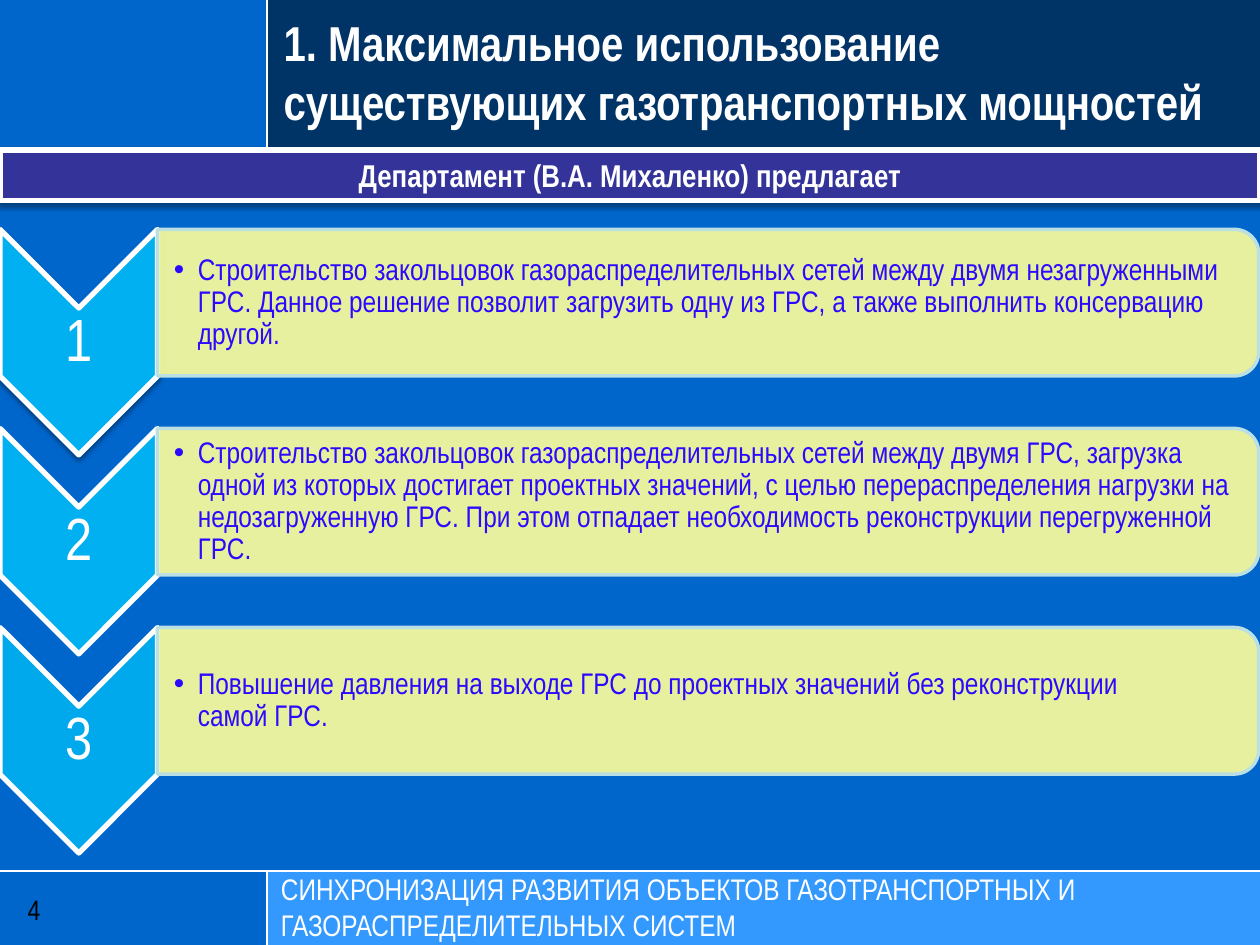
from dataclasses import dataclass

from lxml.etree import SubElement
from pptx import Presentation
from pptx.dml.color import RGBColor
from pptx.enum.shapes import MSO_CONNECTOR, MSO_SHAPE
from pptx.enum.text import MSO_ANCHOR, MSO_AUTO_SIZE, PP_ALIGN
from pptx.oxml.ns import qn
from pptx.util import Inches, Pt


@dataclass(frozen=True)
class Theme:
    """Colours, font and type sizes of the deck."""
    back: str = "0066CC"
    navy: str = "003366"
    sky: str = "3399FF"
    band: str = "333399"
    arrow: str = "00B0F0"
    card: str = "FFFF99"
    edge: str = "BBE0E3"
    ink: str = "2C09FF"
    white: str = "FFFFFF"
    black: str = "000000"
    font: str = "Arial Narrow"
    title: int = 28
    lead: int = 18
    body: int = 17
    digit: int = 34
    page: int = 16


@dataclass(frozen=True)
class Box:
    """A rectangle in inches."""
    x: float
    y: float
    w: float
    h: float

    def share(self, x, y, w, h):
        """Return an inner box given as shares of this one."""
        return Box(self.x + x * self.w, self.y + y * self.h, w * self.w, h * self.h)

    def turn(self):
        """Return the box that covers this one after a quarter turn."""
        return Box(self.x + (self.w - self.h) / 2, self.y + (self.h - self.w) / 2, self.h, self.w)

    def place(self):
        """Return left, top, width and height as lengths."""
        return [Inches(v) for v in (self.x, self.y, self.w, self.h)]


THEME = Theme()
PAGE = Box(0, 0, 10, 7.5)
SIDE = 0.212
STEPS = [
    "Строительство закольцовок газораспределительных сетей между двумя незагруженными ГРС. "
    "Данное решение позволит загрузить одну из ГРС, а также выполнить консервацию другой.",
    "Строительство закольцовок газораспределительных сетей между двумя ГРС, загрузка одной из "
    "которых достигает проектных значений, с целью перераспределения нагрузки на недозагруженную "
    "ГРС. При этом отпадает необходимость реконструкции перегруженной ГРС.",
    "Повышение давления на выходе ГРС до проектных значений без реконструкции\nсамой ГРС.",
]


def fade(shape, share):
    """Make a solid fill partly see-through."""
    color = shape._element.spPr.find(qn("a:solidFill"))[0]
    SubElement(color, qn("a:alpha"), val=str(share * 1000))


def cast(shape):
    """Give a shape a soft shadow below it."""
    effects = shape._element.spPr.find(qn("a:effectLst"))
    glow = SubElement(effects, qn("a:outerShdw"), blurRad=str(Pt(3.1)), dist=str(Pt(1.6)),
                      dir="5400000", rotWithShape="0")
    color = SubElement(glow, qn("a:srgbClr"), val=THEME.black)
    SubElement(color, qn("a:alpha"), val="38000")


def draw(slide, kind, box, fill, line=None, width=0, spin=False):
    """Add a filled shape, turned by a quarter if asked."""
    shape = slide.shapes.add_shape(kind, *(box.turn() if spin else box).place())
    shape.rotation = 90 if spin else 0
    shape.shadow.inherit = False
    shape.fill.solid()
    shape.fill.fore_color.rgb = RGBColor.from_string(fill)
    if line:
        shape.line.color.rgb = RGBColor.from_string(line)
        shape.line.width = Pt(width)
    else:
        shape.line.fill.background()
    return shape


def rule(slide, x1, y1, x2, y2):
    """Add a thin white line between two points."""
    line = slide.shapes.add_connector(MSO_CONNECTOR.STRAIGHT, *[Inches(v) for v in (x1, y1, x2, y2)])
    line.line.color.rgb = RGBColor.from_string(THEME.white)
    line.line.width = Pt(1.25)
    SubElement(line._element.spPr, qn("a:effectLst"))


def write(shape, text, size, color, bold=False, align=PP_ALIGN.LEFT, anchor=MSO_ANCHOR.TOP,
          inset=(0.1, 0.05, 0.1, 0.05), space=1.0, bullet=False):
    """Fill a shape with one formatted paragraph."""
    frame = shape.text_frame
    frame.word_wrap = True
    frame.auto_size = MSO_AUTO_SIZE.NONE
    frame.vertical_anchor = anchor
    (frame.margin_left, frame.margin_top,
     frame.margin_right, frame.margin_bottom) = [Inches(v) for v in inset]
    para = frame.paragraphs[0]
    para.alignment = align
    para.line_spacing = space
    para.space_before = Pt(0)
    props = para._p.get_or_add_pPr()
    if bullet:
        props.set("marL", str(Inches(0.19)))
        props.set("indent", str(-Inches(0.19)))
        SubElement(props, qn("a:buFont"), typeface="Arial")
        SubElement(props, qn("a:buChar"), char="•")
    else:
        props.set("marL", "0")
        props.set("indent", "0")
        SubElement(props, qn("a:buNone"))
    for row, words in enumerate(text.split("\n")):
        if row:
            para.add_line_break()
        run = para.add_run()
        run.text = words
        run.font.name = THEME.font
        run.font.size = Pt(size)
        run.font.bold = bold
        run.font.color.rgb = RGBColor.from_string(color)


def settle(holder, box):
    """Move a placeholder into a box and to the front."""
    holder.left, holder.top, holder.width, holder.height = box.place()
    holder._element.getparent().append(holder._element)
    return holder


def label(slide, box):
    """Add an empty text box."""
    return slide.shapes.add_textbox(*box.place())


def header(slide, box):
    """Build the title strip."""
    draw(slide, MSO_SHAPE.RECTANGLE, box.share(0, 0, SIDE, 1), THEME.back)
    draw(slide, MSO_SHAPE.RECTANGLE, box.share(SIDE, 0, 1 - SIDE, 1), THEME.navy)
    edge, base = box.x + SIDE * box.w, box.y + box.h
    rule(slide, edge, box.y, edge, base)
    rule(slide, box.x, base, box.x + box.w, base)
    title = settle(slide.shapes.title, box.share(0.215, 0.04, 0.785, 0.88))
    write(title, "1. Максимальное использование существующих газотранспортных мощностей",
          THEME.title, THEME.white, bold=True)


def footer(slide, box, holder):
    """Build the bottom strip with page number and topic."""
    draw(slide, MSO_SHAPE.RECTANGLE, box.share(0, 0, SIDE, 1), THEME.back)
    draw(slide, MSO_SHAPE.RECTANGLE, box.share(SIDE, 0, 1 - SIDE, 1), THEME.sky)
    edge = box.x + SIDE * box.w
    rule(slide, edge, box.y, edge, box.y + box.h)
    rule(slide, box.x, box.y, box.x + box.w, box.y)
    write(label(slide, box.share(0.022, 0.08, 0.163, 0.88)), "4", THEME.page, THEME.black,
          anchor=MSO_ANCHOR.MIDDLE, inset=(0, 0, 0, 0))
    write(settle(holder, box.share(0.213, -0.08, 0.787, 1.13)),
          "СИНХРОНИЗАЦИЯ РАЗВИТИЯ ОБЪЕКТОВ ГАЗОТРАНСПОРТНЫХ И ГАЗОРАСПРЕДЕЛИТЕЛЬНЫХ СИСТЕМ",
          THEME.body, THEME.white)


def banner(slide, box):
    """Build the band that names the proposer."""
    band = draw(slide, MSO_SHAPE.RECTANGLE, box, THEME.band, THEME.white, 3)
    cast(band)
    write(band, "Департамент (В.А. Михаленко) предлагает", THEME.lead, THEME.white,
          bold=True, align=PP_ALIGN.CENTER)


def step(slide, box, rank, text, holder):
    """Build one numbered arrow with its card."""
    arrow = draw(slide, MSO_SHAPE.CHEVRON, box.share(0, 0, 0.125, 1), THEME.arrow,
                 THEME.white, 3, spin=True)
    if rank == 1:
        cast(arrow)
    if rank == len(STEPS):
        fade(arrow, 90)
    write(label(slide, box.share(0, 0.35, 0.125, 0.3)), str(rank), THEME.digit, THEME.white,
          align=PP_ALIGN.CENTER, anchor=MSO_ANCHOR.MIDDLE, inset=[0.02] * 4, space=0.9)
    card = draw(slide, MSO_SHAPE.ROUND_2_SAME_RECTANGLE, box.share(0.125, 0, 0.874, 0.65),
                THEME.card, THEME.edge, 2, spin=True)
    fade(card, 90)
    write(settle(holder, box.share(0.125, 0.03, 0.869, 0.59)), text, THEME.body, THEME.ink,
          anchor=MSO_ANCHOR.MIDDLE, inset=(0.13, 0.01, 0.01, 0.01), space=0.9, bullet=True)


def main():
    """Build and save the slide."""
    deck = Presentation()
    deck.slide_width, deck.slide_height = Inches(PAGE.w), Inches(PAGE.h)
    slide = deck.slides.add_slide(deck.slide_layouts[4])
    slide.background.fill.solid()
    slide.background.fill.fore_color.rgb = RGBColor.from_string(THEME.back)
    *cards, topic = [p for p in slide.placeholders if p.placeholder_format.idx]
    header(slide, Box(0, 0, PAGE.w, 1.18))
    banner(slide, Box(0, 1.19, PAGE.w, 0.4))
    footer(slide, Box(0, 6.91, PAGE.w, 0.59), topic)
    for row, (text, holder) in enumerate(zip(STEPS, cards)):
        step(slide, Box(0, 1.82 + 1.58 * row, PAGE.w, 1.79), row + 1, text, holder)
    deck.save("out.pptx")


if __name__ == "__main__":
    main()
